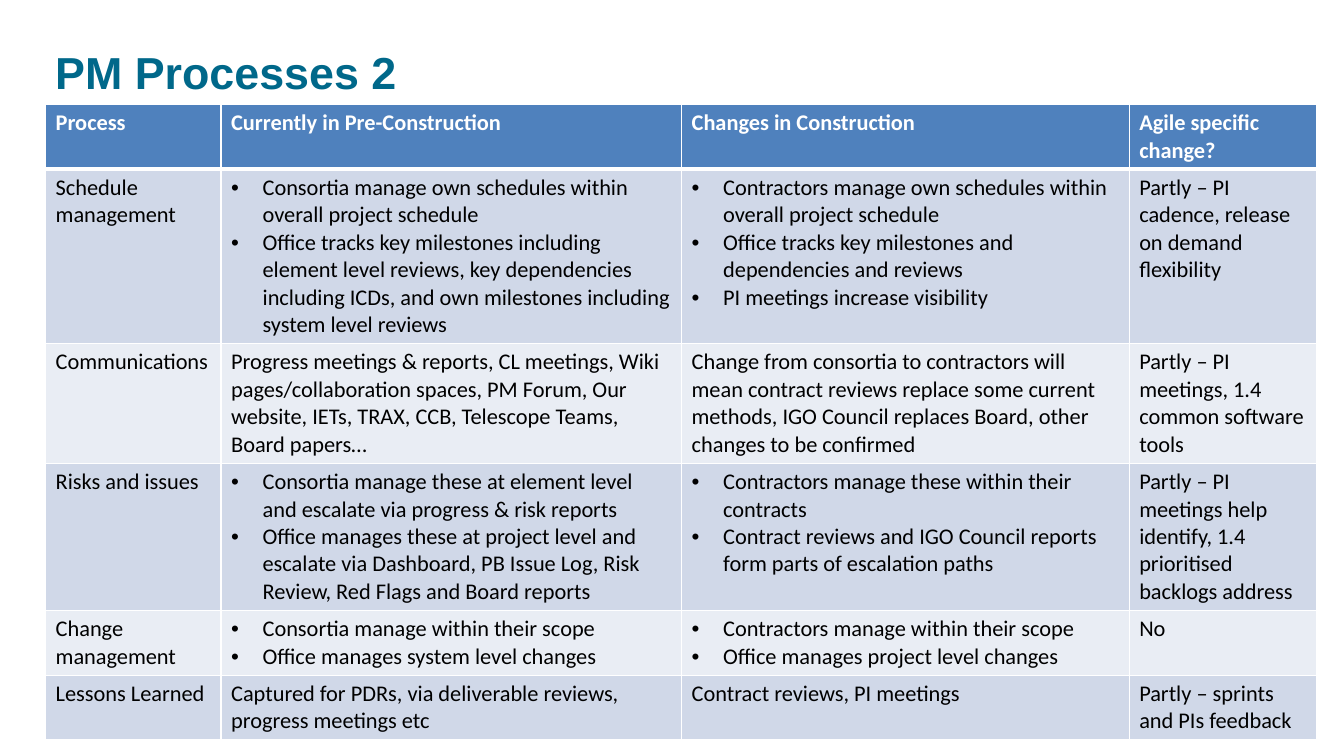
from dataclasses import dataclass

from lxml import etree
from pptx import Presentation
from pptx.dml.color import RGBColor
from pptx.enum.text import MSO_ANCHOR
from pptx.oxml.ns import qn
from pptx.util import Pt

MIDDLE = MSO_ANCHOR.MIDDLE


@dataclass(frozen=True)
class Theme:
    heading: str = "00688A"
    header: str = "4F81BD"
    bands: tuple = ("D0D8E8", "E9EDF4")
    rule: str = "FFFFFF"
    header_text: str = "FFFFFF"
    body_text: str = "000000"
    title_font: str = "Arial"
    table_font: str = "Calibri"
    title_size: float = 32
    table_size: float = 16
    line_height: float = 19.53
    cell_padding: float = 7.2
    bullet_indent: float = 22.5


THEME = Theme()

COLUMN_WIDTHS = (125.3, 329, 319.7, 133.9)
ROW_LINES = (2, 6, 4, 5, 2, 2)
HEADERS = ("Process", "Currently in Pre-Construction",
           "Changes in Construction", "Agile specific change?")

# A string is a plain cell; a list is a bulleted cell
PROCESSES = (
    ("Schedule management",
     ["Consortia manage own schedules within overall project schedule",
      "Office tracks key milestones including element level reviews, key dependencies "
      "including ICDs, and own milestones including system level reviews"],
     ["Contractors manage own schedules within overall project schedule",
      "Office tracks key milestones and dependencies and reviews",
      "PI meetings increase visibility"],
     "Partly – PI cadence, release on demand flexibility"),
    ("Communications",
     "Progress meetings & reports, CL meetings, Wiki pages/collaboration spaces, "
     "PM Forum, Our website, IETs, TRAX, CCB, Telescope Teams, Board papers…",
     "Change from consortia to contractors will mean contract reviews replace some "
     "current methods, IGO Council replaces Board, other changes to be confirmed",
     "Partly – PI meetings, 1.4 common software tools"),
    ("Risks and issues",
     ["Consortia manage these at element level and escalate via progress & risk reports",
      "Office manages these at project level and escalate via Dashboard, PB Issue Log, "
      "Risk Review, Red Flags and Board reports"],
     ["Contractors manage these within their contracts",
      "Contract reviews and IGO Council reports form parts of escalation paths"],
     "Partly – PI meetings help identify, 1.4 prioritised backlogs address"),
    ("Change management",
     ["Consortia manage within their scope", "Office manages system level changes"],
     ["Contractors manage within their scope", "Office manages project level changes"],
     "No"),
    ("Lessons Learned",
     "Captured for PDRs, via deliverable reviews, progress meetings etc",
     "Contract reviews, PI meetings",
     "Partly – sprints and PIs feedback"),
)


def format_font(font, color, **values):
    for name, value in values.items():
        setattr(font, name, value)
    font.color.rgb = RGBColor.from_string(color)


def add_bullet(paragraph):
    properties = paragraph._p.get_or_add_pPr()
    properties.set("marL", str(Pt(THEME.bullet_indent)))
    properties.set("indent", str(-Pt(THEME.bullet_indent)))
    etree.SubElement(properties, qn("a:buFont"), typeface="Arial")
    etree.SubElement(properties, qn("a:buChar"), char="•")


def set_borders(cell, bottom_width):
    properties = cell._tc.get_or_add_tcPr()
    widths = {"a:lnL": 1, "a:lnR": 1, "a:lnT": 1, "a:lnB": bottom_width}
    for tag, width in widths.items():
        line = etree.SubElement(properties, qn(tag), w=str(Pt(width)))
        fill = etree.SubElement(line, qn("a:solidFill"))
        etree.SubElement(fill, qn("a:srgbClr"), val=THEME.rule)


def fill_cell(cell, content, fill, color, bold=False, bottom_width=1):
    set_borders(cell, bottom_width)
    cell.fill.solid()
    cell.fill.fore_color.rgb = RGBColor.from_string(fill)
    bulleted = isinstance(content, list)
    lines = content if bulleted else [content]
    cell.text_frame.text = "\n".join(lines)
    for paragraph in cell.text_frame.paragraphs:
        if bulleted:
            add_bullet(paragraph)
        for run in paragraph.runs:
            format_font(run.font, color, name=THEME.table_font,
                        size=Pt(THEME.table_size), bold=bold)


def add_title(slide, text):
    box = slide.shapes.add_textbox(Pt(32.4), Pt(26.6), Pt(659), Pt(49))
    frame = box.text_frame
    for name, value in {"word_wrap": True, "vertical_anchor": MIDDLE, "text": text}.items():
        setattr(frame, name, value)
    format_font(frame.paragraphs[0].runs[0].font, THEME.heading, name=THEME.title_font,
                size=Pt(THEME.title_size), bold=True)


def add_process_table(slide):
    heights = [lines * THEME.line_height + THEME.cell_padding for lines in ROW_LINES]
    table = slide.shapes.add_table(
        len(ROW_LINES), len(COLUMN_WIDTHS), Pt(32.6), Pt(74.5),
        Pt(sum(COLUMN_WIDTHS)), Pt(sum(heights))).table
    for column, width in zip(table.columns, COLUMN_WIDTHS):
        column.width = Pt(width)
    for row, height in zip(table.rows, heights):
        row.height = Pt(height)

    # Header row
    for index, header in enumerate(HEADERS):
        fill_cell(table.cell(0, index), header, THEME.header, THEME.header_text,
                  bold=True, bottom_width=3)

    # Banded process rows
    for row_index, process in enumerate(PROCESSES):
        band = THEME.bands[row_index % 2]
        for index, content in enumerate(process):
            fill_cell(table.cell(row_index + 1, index), content, band, THEME.body_text)


def main():
    presentation = Presentation()
    presentation.slide_width = Pt(960)
    presentation.slide_height = Pt(540)
    slide = presentation.slides.add_slide(presentation.slide_layouts[6])
    add_process_table(slide)
    add_title(slide, "PM Processes 2")
    presentation.save("out.pptx")


if __name__ == "__main__":
    main()
